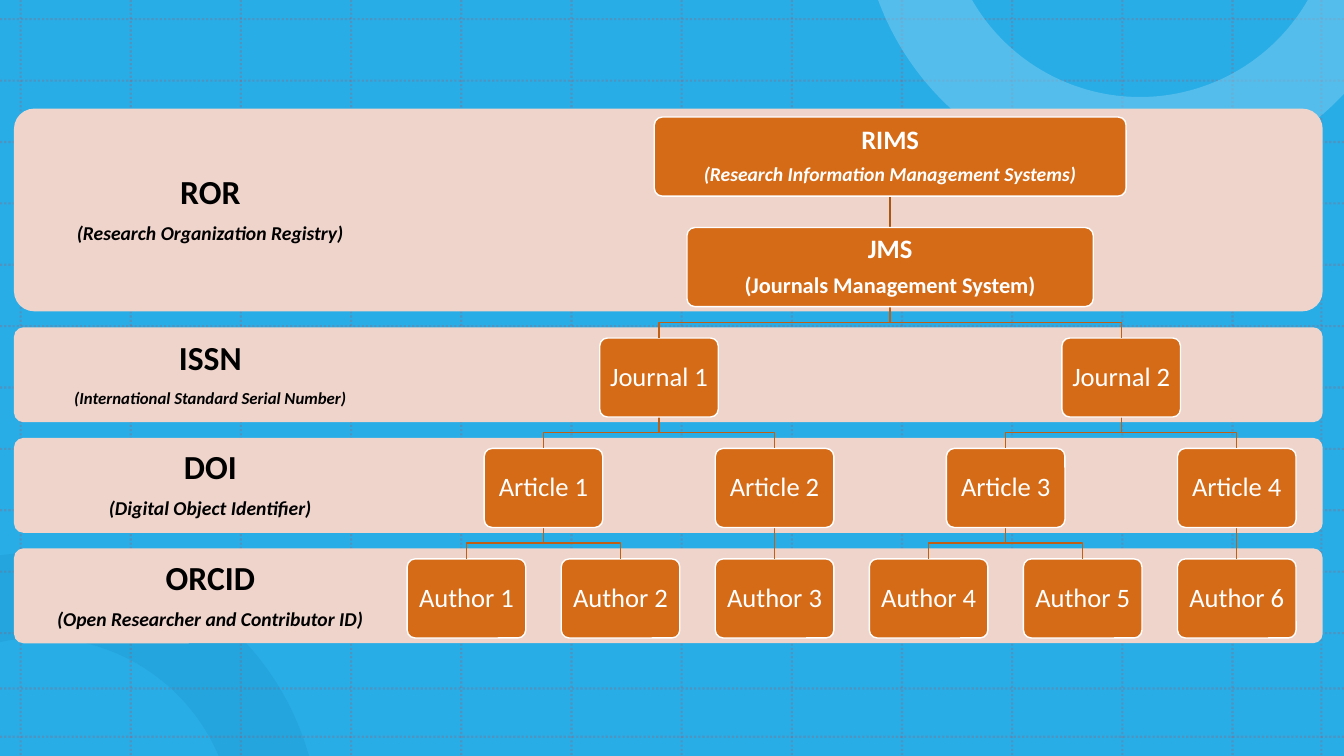
from dataclasses import dataclass
from math import acos, asin, cos, degrees, radians, sin, tan

from lxml import etree
from pptx import Presentation
from pptx.dml.color import RGBColor
from pptx.enum import dml, shapes, text
from pptx.oxml.ns import qn
from pptx.util import Pt


@dataclass(frozen=True)
class Theme:
    """Colours, font and type sizes of the slide."""
    sky: str = "29ADE7"
    grid: str = "E72D29"
    ring_light: str = "7FCEF1"
    ring_dark: str = "1586B7"
    band: str = "EFD4CC"
    node: str = "D56A17"
    root_link: str = "AB5512"
    link: str = "C16015"
    white: str = "FFFFFF"
    black: str = "000000"
    font: str = "Calibri"
    heading: int = 24
    node_size: int = 19
    wide: int = 16
    sub: int = 14
    small: int = 12


T = Theme()
SLIDE_W, SLIDE_H = 960, 540
NODE_W, NODE_H, LEVEL_STEP = 84.7, 56.5, 78.9
LEAF_X, LEAF_STEP = 333.2, 110.05

BANDS = [
    (77.6, 144.8, "ROR", "(Research Organization Registry)", T.sub),
    (233.8, 67.8, "ISSN", "(International Standard Serial Number)", T.small),
    (312.8, 67.8, "DOI", "(Digital Object Identifier)", T.sub),
    (391.7, 67.8, "ORCID", "(Open Researcher and Contributor ID)", T.sub),
]
JOURNALS = [
    ("Journal 1", [("Article 1", ["Author 1", "Author 2"]), ("Article 2", ["Author 3"])]),
    ("Journal 2", [("Article 3", ["Author 4", "Author 5"]), ("Article 4", ["Author 6"])]),
]


def rgb(value):
    """Turn a hex string into a colour."""
    return RGBColor.from_string(value)


def set_alpha(fill_parent, percent):
    """Make the solid fill found under an element translucent."""
    color = fill_parent.find(qn("a:solidFill"))[0]
    etree.SubElement(color, qn("a:alpha")).set("val", str(percent * 1000))


def add_grid_line(s, x1, y1, x2, y2):
    """Draw one faint dotted line without a shadow."""
    c = s.shapes.add_connector(shapes.MSO_CONNECTOR.STRAIGHT, Pt(x1), Pt(y1), Pt(x2), Pt(y2))
    c.line.color.rgb = rgb(T.grid)
    c.line.width = Pt(1.5)
    c.line.dash_style = dml.MSO_LINE.ROUND_DOT
    set_alpha(c.line._ln, 20)
    etree.SubElement(c._element.spPr, qn("a:effectLst"))


def add_outline(s, points, close):
    """Build a freeform through points given in points."""
    (x, y), *rest = points
    b = s.shapes.build_freeform(Pt(x), Pt(y))
    b.add_line_segments([(Pt(px), Pt(py)) for px, py in rest], close=close)
    sp = b.convert_to_shape()
    sp.shadow.inherit = False
    return sp


def arc(cx, cy, radius, *angles):
    """List the start of an arc, then a Bézier step to each further angle."""
    def at(angle, lean=0):
        a = radians(angle)
        return cx + radius * (cos(a) - lean * sin(a)), cy + radius * (sin(a) + lean * cos(a))

    steps = [(at(angles[0]),)]
    for a, b in zip(angles, angles[1:]):
        lean = 4 / 3 * tan(radians(b - a) / 4)
        steps.append((at(a, lean), at(b, -lean), at(b)))
    return steps


def add_ring(s, steps, color, alpha):
    """Draw one translucent piece of a ring from line and curve steps."""
    sp = add_outline(s, [step[-1] for step in steps], True)
    segments = list(sp._element.iter(qn("a:lnTo")))
    for segment, (*controls, _) in zip(segments, steps[1:]):
        for i, (x, y) in enumerate(controls):
            local = {"x": str(Pt(x) - sp.left), "y": str(Pt(y) - sp.top)}
            segment.insert(i, etree.Element(qn("a:pt"), local))
        if controls:
            segment.tag = qn("a:cubicBezTo")
    sp.fill.solid()
    sp.fill.fore_color.rgb = rgb(color)
    set_alpha(sp._element.spPr, alpha)
    sp.line.fill.background()


def add_backdrop(s, w, h):
    """Draw the sky, the dotted grid and the two rings."""
    add_box(s, 0, 0, w, h, T.sky, shapes.MSO_SHAPE.RECTANGLE)
    columns = [14.7 + 78.7 * i for i in range(12)] + [943.9]
    rows = [13.7 + 43.85 * i for i in range(11)] + [491.8, 526.3]
    for ends in [(x, 0, x, h) for x in columns] + [(0, y, w, y) for y in rows]:
        add_grid_line(s, *ends)

    outer, inner = 199.4, 138.4
    cx, sunk = 28.8, 54
    low = arc(cx, h + sunk, outer, degrees(acos(cx / outer)) - 180, -90, -degrees(asin(sunk / outer)))
    low += arc(cx, h + sunk, inner, -degrees(asin(sunk / inner)), -90, degrees(acos(cx / inner)) - 180)
    add_ring(s, low, T.ring_dark, 20)

    cx, drop = 814.3, 69.1
    high = arc(cx, -drop, outer, 180 - degrees(asin(drop / outer)), 90, degrees(acos((w - cx) / outer)))
    cut = degrees(asin(drop / inner))
    high += [((w, 0),)] + arc(cx, -drop, inner, cut, 90, 180 - cut)
    add_ring(s, high, T.ring_light, 50)


def add_box(s, x, y, w, h, fill, kind=shapes.MSO_SHAPE.ROUNDED_RECTANGLE):
    """Draw a filled box without an outline."""
    sp = s.shapes.add_shape(kind, Pt(x), Pt(y), Pt(w), Pt(h))
    if len(sp.adjustments):
        sp.adjustments[0] = 0.1
    sp.shadow.inherit = False
    sp.fill.solid()
    sp.fill.fore_color.rgb = rgb(fill)
    sp.line.fill.background()
    return sp


def write(sp, lines, color, inset):
    """Write centred lines of (text, size, bold, italic) into a shape."""
    tf = sp.text_frame
    tf.word_wrap = True
    tf.vertical_anchor = text.MSO_ANCHOR.MIDDLE
    tf.margin_left = tf.margin_right = tf.margin_top = tf.margin_bottom = Pt(inset)
    tf.text = "\n".join(line[0] for line in lines)
    for p, (_, size, bold, italic) in zip(tf.paragraphs, lines):
        p.alignment = text.PP_ALIGN.CENTER
        p.line_spacing = 0.9
        p.space_after = Pt(round(size * 0.35, 1))
        f = p.runs[0].font
        f.name, f.size, f.bold, f.italic = T.font, Pt(size), bold, italic
        f.color.rgb = rgb(color)


def add_band(s, x, y, w, h, name, meaning, size):
    """Draw one identifier band with its label on the left."""
    add_box(s, x, y, w, h, T.band)
    label = s.shapes.add_textbox(Pt(x), Pt(y), Pt(w * 0.3), Pt(h))
    write(label, [(name, T.heading, True, False), (meaning, size, True, True)], T.black, 13.5)


def level_top(level):
    """Give the top of a tree level."""
    return 83.6 + LEVEL_STEP * level


def add_node(s, cx, level, lines, w=NODE_W):
    """Draw one tree node centred on cx."""
    sp = add_box(s, cx - w / 2, level_top(level), w, NODE_H, T.node)
    sp.line.color.rgb = rgb(T.white)
    sp.line.width = Pt(1)
    write(sp, lines, T.white, 5)


def add_link(s, x1, x2, level, color=T.link):
    """Join a node to a child on the next level."""
    top, bottom = level_top(level) + NODE_H, level_top(level + 1)
    mid = (top + bottom) / 2
    straight = abs(x1 - x2) < 0.1
    bend = [] if straight else [(x1, mid), (x2, mid)]
    sp = add_outline(s, [(x1, top), *bend, (x1 if straight else x2, bottom)], False)
    if straight:
        sp.left, sp.width = Pt(x1 - 3.6), Pt(7.2)
        next(sp._element.iter(qn("a:path"))).set("w", str(Pt(7.2)))
        for pt in sp._element.iter(qn("a:pt")):
            pt.set("x", str(Pt(3.6)))
    sp.fill.background()
    sp.line.color.rgb = rgb(color)
    sp.line.width = Pt(1)


def add_branch(s, branch, level, leaves):
    """Draw a branch over its children and return its centre."""
    name, children = (branch, []) if isinstance(branch, str) else branch
    centres = [add_branch(s, child, level + 1, leaves) for child in children]
    cx = (centres[0] + centres[-1]) / 2 if centres else next(leaves)
    for child_x in centres:
        add_link(s, cx, child_x, level)
    add_node(s, cx, level, [(name, T.node_size, False, False)])
    return cx


def add_tree(s):
    """Draw the systems, journals, articles and authors."""
    leaves = (LEAF_X + LEAF_STEP * i for i in range(6))
    centres = [add_branch(s, journal, 2, leaves) for journal in JOURNALS]
    cx = sum(centres) / len(centres)
    add_link(s, cx, cx, 0, T.root_link)
    for child_x in centres:
        add_link(s, cx, child_x, 1)
    add_node(s, cx, 0, [("RIMS", T.node_size, True, False),
                        ("(Research Information Management Systems)", T.sub, True, True)], 337)
    add_node(s, cx, 1, [("JMS", T.node_size, True, False),
                        ("(Journals Management System)", T.wide, True, False)], 290.2)


prs = Presentation()
prs.slide_width, prs.slide_height = Pt(SLIDE_W), Pt(SLIDE_H)
s = prs.slides.add_slide(prs.slide_layouts[6])
add_backdrop(s, SLIDE_W, SLIDE_H)
for y, h, name, meaning, size in BANDS:
    add_band(s, 10, y, 934.8, h, name, meaning, size)
add_tree(s)
prs.save("out.pptx")
